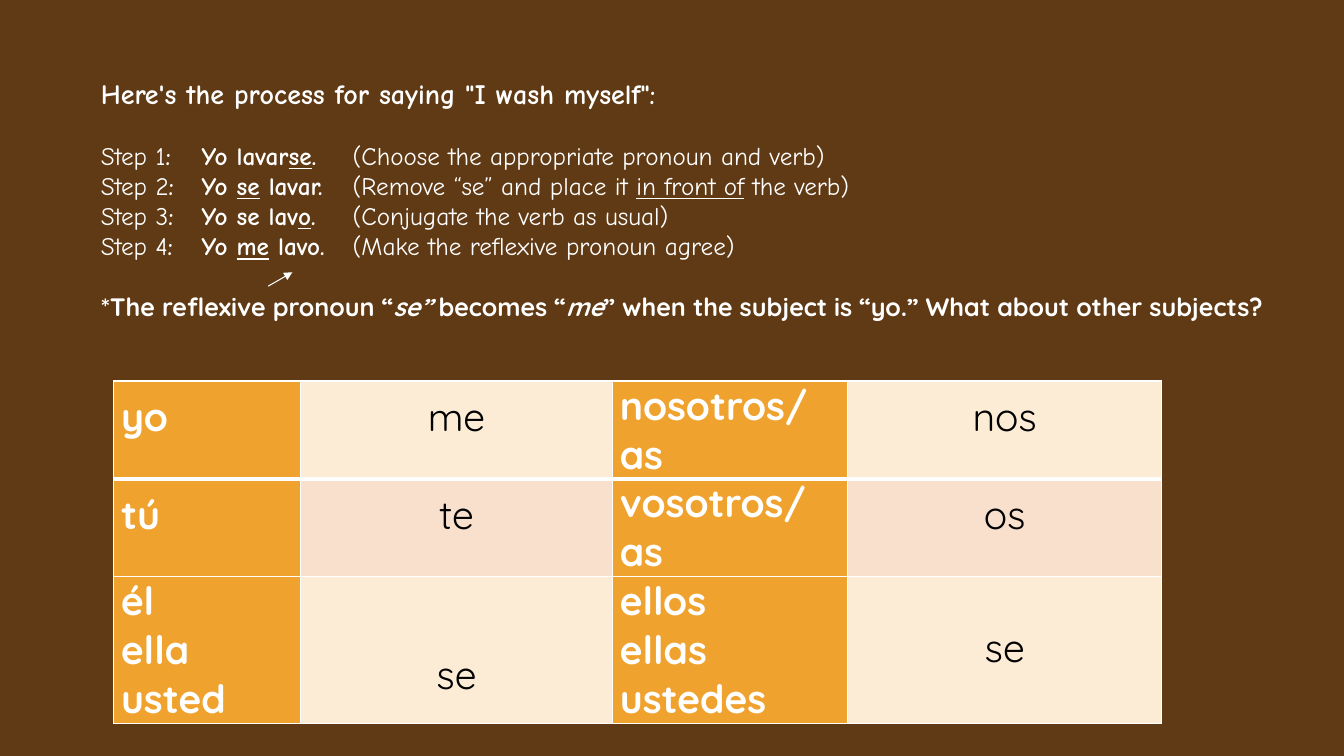
from dataclasses import dataclass

from lxml.etree import SubElement
from pptx import Presentation
from pptx.dml.color import RGBColor
from pptx.enum.shapes import MSO_CONNECTOR
from pptx.enum.text import MSO_ANCHOR, MSO_AUTO_SIZE, PP_ALIGN
from pptx.oxml.ns import qn
from pptx.util import Cm, Pt


@dataclass(frozen=True)
class Theme:
    background: str = "603A14"
    white: str = "FFFFFF"
    black: str = "000000"
    subject: str = "F0A22E"
    light_row: str = "FCECD5"
    dark_row: str = "F9E0CD"
    story_font: str = "Comic Neue"
    table_font: str = "Quicksand"
    heading_size: int = 20
    body_size: int = 18
    table_size: int = 28
    tight_line: float = 15.8


THEME = Theme()
BOLD = {"bold": True}
UNDERLINED = {"bold": True, "underline": True}
EMPHASIS = {"bold": True, "italic": True}

# Each step: its Spanish sentence, then its explanation
STEPS = [
    ([("Yo lavar", BOLD), ("se", UNDERLINED), (".", BOLD)],
     [("(Choose the appropriate pronoun and verb)", {})]),
    ([("Yo ", BOLD), ("se", UNDERLINED), (" lavar.", BOLD)],
     [("(Remove “se” and place it ", {}), ("in front of", {"underline": True}),
      (" the verb)", {})]),
    ([("Yo se lav", BOLD), ("o", UNDERLINED), (".", BOLD)],
     [("(Conjugate the verb as usual)", {})]),
    ([("Yo ", BOLD), ("me", UNDERLINED), (" lavo.", BOLD)],
     [("(Make the reflexive pronoun agree)", {})]),
]
CONCLUSION = [
    ("*The reflexive pronoun “", BOLD), ("se”", EMPHASIS), (" becomes “", BOLD),
    ("me", EMPHASIS),
    ("” when the subject is “yo.” What about other subjects?", BOLD),
]
PRONOUNS = [
    (["yo"], "me", ["nosotros/as"], "nos"),
    (["tú"], "te", ["vosotros/as"], "os"),
    (["él", "ella", "usted"], "se", ["ellos", "ellas", "ustedes"], "se"),
]


def add_text(paragraph, text, size=THEME.body_size, font=THEME.story_font,
             color=THEME.white, bold=False, italic=False, underline=False):
    run = paragraph.add_run()
    run.text = text
    run.font.size = Pt(size)
    run.font.name = font
    run.font.color.rgb = RGBColor.from_string(color)
    run.font.bold = bold
    run.font.italic = italic
    run.font.underline = underline


def next_paragraph(frame):
    first = frame.paragraphs[0]
    return frame.add_paragraph() if first.runs else first


def indent(paragraph, tab_stops=()):
    properties = paragraph._p.get_or_add_pPr()
    properties.set("marL", "0")
    properties.set("indent", str(Cm(1.27)))
    if tab_stops:
        tab_list = SubElement(properties, qn("a:tabLst"))
        for stop in tab_stops:
            SubElement(tab_list, qn("a:tab"), pos=str(Cm(stop)), algn="l")


def add_process(slide, left, top, width, height):
    box = slide.shapes.add_textbox(Cm(left), Cm(top), Cm(width), Cm(height))
    frame = box.text_frame
    frame.word_wrap = True
    frame.auto_size = MSO_AUTO_SIZE.SHAPE_TO_FIT_TEXT

    # Heading
    heading = next_paragraph(frame)
    indent(heading)
    heading.space_after = Pt(21.5)
    add_text(heading, "Here's the process for saying \"I wash myself\":",
             size=THEME.heading_size, bold=True)

    # Steps in three tabbed columns
    for number, (sentence, explanation) in enumerate(STEPS, 1):
        paragraph = next_paragraph(frame)
        indent(paragraph, tab_stops=(4, 7.55))
        parts = [(f"Step {number}", {}), (":\t", BOLD), *sentence,
                 ("\t", {}), *explanation]
        for text, style in parts:
            add_text(paragraph, text, **style)

    # Conclusion
    conclusion = next_paragraph(frame)
    indent(conclusion)
    conclusion.space_before = Pt(21.5)
    for text, style in CONCLUSION:
        add_text(conclusion, text, font=THEME.table_font, **style)

    # Arrow pointing at "me lavo"
    arrow = slide.shapes.add_connector(
        MSO_CONNECTOR.STRAIGHT, Cm(left + 5.74), Cm(top + 5.41),
        Cm(left + 6.35), Cm(top + 5.06))
    arrow.line.color.rgb = RGBColor.from_string(THEME.white)
    arrow.line.width = Pt(0.75)
    SubElement(arrow.line._get_or_add_ln(), qn("a:tailEnd"), type="triangle")
    SubElement(arrow._element.spPr, qn("a:effectLst"))


def set_borders(cell, top, bottom):
    properties = cell._tc.get_or_add_tcPr()
    for side, width in (("L", 1), ("R", 1), ("T", top), ("B", bottom)):
        line = SubElement(properties, qn(f"a:ln{side}"), w=str(Pt(width)))
        fill = SubElement(line, qn("a:solidFill"))
        SubElement(fill, qn("a:srgbClr"), val=THEME.white)


def fill_cell(cell, lines, fill, tight, centered, **style):
    cell.fill.solid()
    cell.fill.fore_color.rgb = RGBColor.from_string(fill)
    cell.vertical_anchor = MSO_ANCHOR.MIDDLE
    cell.margin_left = cell.margin_right = Cm(0.18)
    cell.margin_top = cell.margin_bottom = 0
    for text in lines:
        paragraph = next_paragraph(cell.text_frame)
        paragraph.alignment = PP_ALIGN.CENTER if centered else PP_ALIGN.LEFT
        if tight:
            paragraph.line_spacing = Pt(THEME.tight_line)
        add_text(paragraph, text, size=THEME.table_size,
                 font=THEME.table_font, **style)


def add_pronoun_table(slide, left, top, widths, heights):
    frame = slide.shapes.add_table(len(heights), len(widths), Cm(left), Cm(top),
                                   Cm(sum(widths)), Cm(sum(heights)))
    table = frame.table
    table.first_row = table.horz_banding = False
    for column, width in zip(table.columns, widths):
        column.width = Cm(width)
    for row, height in zip(table.rows, heights):
        row.height = Cm(height)

    for row_index, entries in enumerate(PRONOUNS):
        last_row = row_index == len(PRONOUNS) - 1
        band = THEME.dark_row if row_index % 2 else THEME.light_row
        for column_index, entry in enumerate(entries):
            cell = table.cell(row_index, column_index)
            set_borders(cell, top=3 if row_index == 1 else 1,
                        bottom=3 if row_index == 0 else 1)
            if column_index % 2 == 0:
                fill_cell(cell, entry, THEME.subject, centered=False, bold=True,
                          tight=column_index == 0 and not last_row)
            else:
                fill_cell(cell, [entry], band, centered=True, color=THEME.black,
                          tight=column_index == 3 or not last_row)

    # The last pronouns sit one line lower
    table.cell(2, 1).margin_top = Cm(1.24)
    table.cell(2, 3).margin_top = Cm(0.56)


def main():
    presentation = Presentation()
    presentation.slide_width = Cm(33.87)
    presentation.slide_height = Cm(19.05)
    slide = presentation.slides.add_slide(presentation.slide_layouts[6])
    slide.background.fill.solid()
    slide.background.fill.fore_color.rgb = RGBColor.from_string(THEME.background)

    add_pronoun_table(slide, left=2.87, top=9.6, widths=(4.7, 7.87, 5.92, 7.92),
                      heights=(1.37, 1.3, 2.46))
    add_process(slide, left=1.02, top=1.8, width=31.83, height=7.26)
    presentation.save("out.pptx")


if __name__ == "__main__":
    main()
